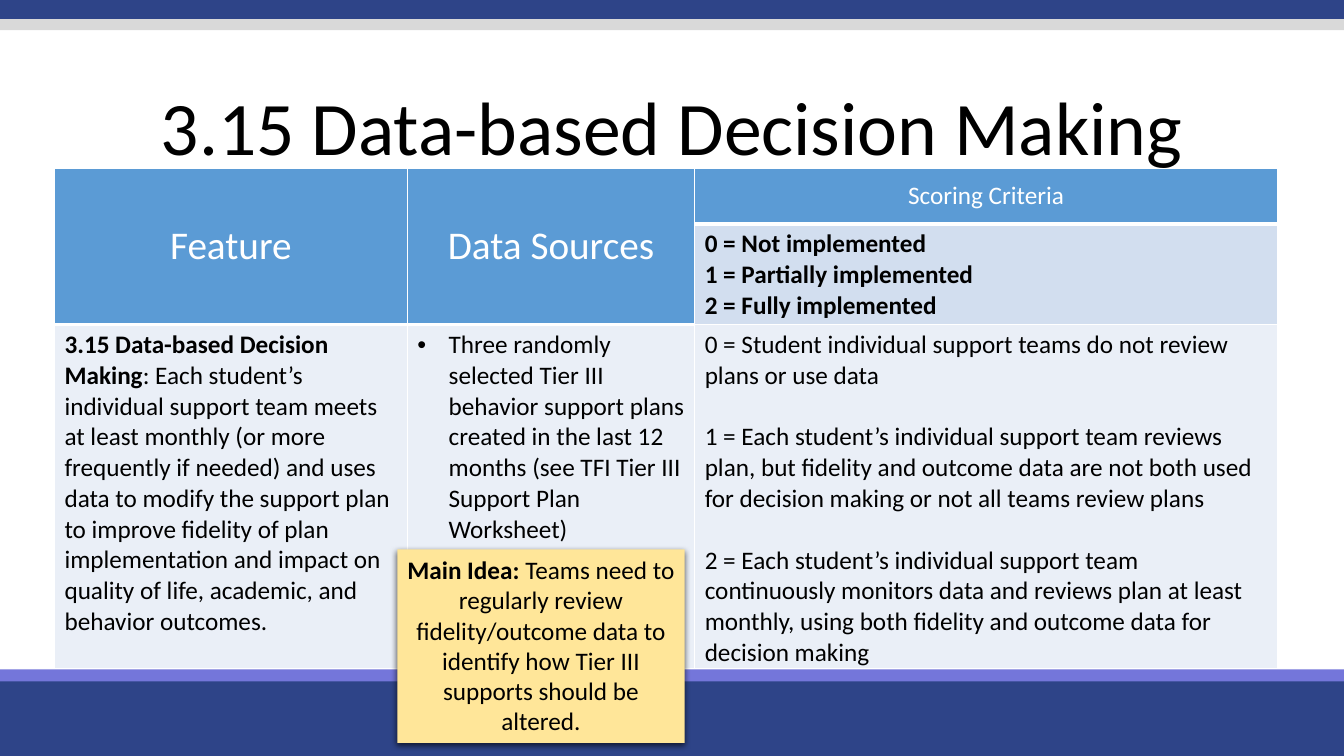
from dataclasses import dataclass

from lxml.etree import SubElement
from pptx import Presentation
from pptx.dml.color import RGBColor
from pptx.enum.shapes import MSO_SHAPE
from pptx.enum.text import MSO_ANCHOR, PP_ALIGN
from pptx.oxml.ns import qn
from pptx.util import Inches, Pt


@dataclass(frozen=True)
class Theme:
    font: str = "Calibri"
    navy: str = "2E4488"
    violet: str = "7476DA"
    gray: str = "D9D9D9"
    header: str = "5B9BD5"
    scale: str = "D2DEEF"
    body: str = "EAEFF7"
    note: str = "FFE699"
    black: str = "000000"
    white: str = "FFFFFF"
    title_size: int = 54
    header_size: int = 28
    text_size: int = 18
    gap: int = 22


THEME = Theme()
WIDTH, HEIGHT = 13.33, 7.5

TITLE = "3.15 Data-based Decision Making"
HEADERS = [("Feature", THEME.header_size), ("Data Sources", THEME.header_size),
           ("Scoring Criteria", THEME.text_size)]
SCALE = [("0 = Not implemented", ""), ("1 = Partially implemented", ""),
         ("2 = Fully implemented", "")]
FEATURE = [("3.15 Data-based Decision Making",
            ": Each student’s individual support team meets at least monthly (or more "
            "frequently if needed) and uses data to modify the support plan to improve "
            "fidelity of plan implementation and impact on quality of life, academic, "
            "and behavior outcomes.")]
SOURCES = [("", "Three randomly selected Tier III behavior support plans created in the "
            "last 12 months (see TFI Tier III Support Plan Worksheet)")]
CRITERIA = [
    ("", "0 = Student individual support teams do not review plans or use data"),
    ("", "1 = Each student’s individual support team reviews plan, but fidelity and "
     "outcome data are not both used for decision making or not all teams review plans"),
    ("", "2 = Each student’s individual support team continuously monitors data and "
     "reviews plan at least monthly, using both fidelity and outcome data for "
     "decision making"),
]
MAIN_IDEA = [("Main Idea: ", "Teams need to regularly review fidelity/outcome data to "
              "identify how Tier III supports should be altered.")]

BANDS = [(-0.03, 0.22, THEME.navy), (0.19, 0.11, THEME.gray),
         (6.7, 0.8, THEME.navy), (6.64, 0.12, THEME.violet)]
TABLE_LEFT, TABLE_TOP = 0.54, 1.67
COLUMNS = [3.5, 2.85, 5.78]
ROWS = [0.55, 0.99, 3.31]
NOTE_TOP, NOTE_HEIGHT = 5.45, 1.92
INDENT = 0.31


def color(value):
    return RGBColor.from_string(value)


def write(frame, paragraphs, size=THEME.text_size, ink=THEME.black,
          align=PP_ALIGN.LEFT, gap=0, bullet=False):
    frame.word_wrap = True
    for index, runs in enumerate(paragraphs):
        paragraph = frame.add_paragraph() if index else frame.paragraphs[0]
        paragraph.alignment = align
        if index and gap:
            paragraph.space_before = Pt(gap)
        if bullet:
            properties = paragraph._p.get_or_add_pPr()
            properties.set("marL", str(Inches(INDENT)))
            properties.set("indent", str(-Inches(INDENT)))
            SubElement(properties, qn("a:buFont"), typeface="Arial")
            SubElement(properties, qn("a:buChar"), char="•")
        paragraph.font.name = THEME.font
        paragraph.font.size = Pt(size)
        paragraph.font.color.rgb = color(ink)
        for text, bold in zip(runs, (True, False)):
            if text:
                run = paragraph.add_run()
                run.text = text
                run.font.bold = bold


def add_rectangle(slide, left, top, width, height, fill):
    shape = slide.shapes.add_shape(MSO_SHAPE.RECTANGLE, *map(Inches, (left, top, width, height)))
    shape.shadow.inherit = False
    shape.fill.solid()
    shape.fill.fore_color.rgb = color(fill)
    shape.line.fill.background()
    return shape


def style_cell(cell, fill, bottom=1):
    properties = cell._tc.get_or_add_tcPr()
    for side, points in zip("LRTB", (1, 1, 1, bottom)):
        border = SubElement(properties, qn(f"a:ln{side}"), w=str(Pt(points)))
        solid = SubElement(border, qn("a:solidFill"))
        SubElement(solid, qn("a:srgbClr"), val=THEME.white)
    cell.fill.solid()
    cell.fill.fore_color.rgb = color(fill)


def add_title(slide):
    box = slide.shapes.add_textbox(0, Inches(0.69), Inches(WIDTH), Inches(1.21))
    box.text_frame.vertical_anchor = MSO_ANCHOR.MIDDLE
    write(box.text_frame, [("", TITLE)], THEME.title_size, align=PP_ALIGN.CENTER)
    box.text_frame.paragraphs[0].line_spacing = 0.9


def add_rubric(slide):
    frame = slide.shapes.add_table(len(ROWS), len(COLUMNS), Inches(TABLE_LEFT),
                                   Inches(TABLE_TOP), Inches(sum(COLUMNS)), Inches(sum(ROWS)))
    table = frame.table
    for column, width in zip(table.columns, COLUMNS):
        column.width = Inches(width)
    for row, height in zip(table.rows, ROWS):
        row.height = Inches(height)
    for index, (text, size) in enumerate(HEADERS):
        cell = table.cell(0, index)
        style_cell(cell, THEME.header, bottom=3)
        cell.vertical_anchor = MSO_ANCHOR.MIDDLE
        write(cell.text_frame, [("", text)], size, THEME.white, PP_ALIGN.CENTER)
    for index in (0, 1):
        style_cell(table.cell(1, index), THEME.header, bottom=3)
        table.cell(0, index).merge(table.cell(1, index))
    scale = table.cell(1, 2)
    style_cell(scale, THEME.scale)
    scale.vertical_anchor = MSO_ANCHOR.MIDDLE
    write(scale.text_frame, SCALE)
    for index, paragraphs in enumerate((FEATURE, SOURCES, CRITERIA)):
        cell = table.cell(2, index)
        style_cell(cell, THEME.body)
        write(cell.text_frame, paragraphs, gap=THEME.gap, bullet=paragraphs is SOURCES)


def add_main_idea(slide):
    left = TABLE_LEFT + COLUMNS[0] - 0.1
    note = add_rectangle(slide, left, NOTE_TOP, COLUMNS[1], NOTE_HEIGHT, THEME.note)
    effects = note._element.spPr.find(qn("a:effectLst"))
    shadow = SubElement(effects, qn("a:outerShdw"), blurRad=str(Pt(4.5)),
                        dist=str(Pt(1.5)), dir="5400000", algn="ctr", rotWithShape="0")
    tint = SubElement(shadow, qn("a:srgbClr"), val=THEME.black)
    SubElement(tint, qn("a:alpha"), val="63000")
    note.text_frame.vertical_anchor = MSO_ANCHOR.TOP
    write(note.text_frame, MAIN_IDEA, align=PP_ALIGN.CENTER)


def main():
    presentation = Presentation()
    presentation.slide_width, presentation.slide_height = Inches(WIDTH), Inches(HEIGHT)
    slide = presentation.slides.add_slide(presentation.slide_layouts[6])
    for top, height, fill in BANDS:
        add_rectangle(slide, 0, top, WIDTH, height, fill)
    add_title(slide)
    add_rubric(slide)
    add_main_idea(slide)
    presentation.save("out.pptx")


if __name__ == "__main__":
    main()
